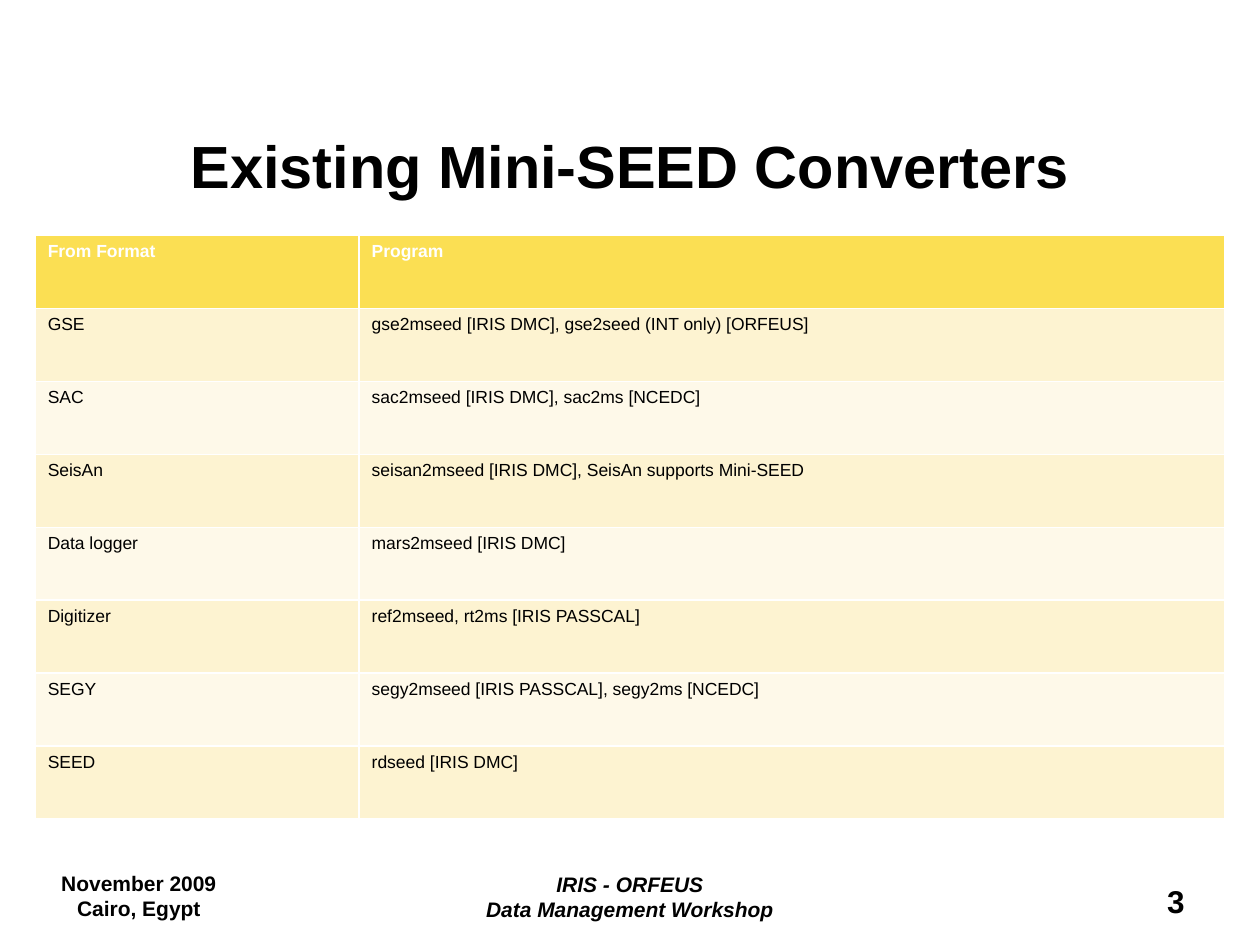
from dataclasses import dataclass, field

from pptx import Presentation
from pptx.dml.color import RGBColor
from pptx.enum.text import MSO_ANCHOR, PP_ALIGN
from pptx.util import Cm, Pt

BLACK, WHITE = "000000", "FFFFFF"
HEAD, BANDS = "FBDF53", ("FDF3D1", "FEF9E9")
COLS = (6.53, 17.45)
ROW = 1.47
ROWS = (
    ("From Format", "Program"),
    ("GSE", "gse2mseed [IRIS DMC], gse2seed (INT only) [ORFEUS]"),
    ("SAC", "sac2mseed [IRIS DMC], sac2ms [NCEDC]"),
    ("SeisAn", "seisan2mseed [IRIS DMC], SeisAn supports Mini-SEED"),
    ("Data logger", "mars2mseed [IRIS DMC]"),
    ("Digitizer", "ref2mseed, rt2ms [IRIS PASSCAL]"),
    ("SEGY", "segy2mseed [IRIS PASSCAL], segy2ms [NCEDC]"),
    ("SEED", "rdseed [IRIS DMC]"),
)


@dataclass
class Note:
    lines: tuple
    box: tuple
    align: PP_ALIGN = PP_ALIGN.CENTER
    style: dict = field(default_factory=dict)


NOTES = (
    Note(("November 2009", "Cairo, Egypt"), (0.3, 17.42, 5, 1.27)),
    Note(("IRIS - ORFEUS", "Data Management Workshop"),
         (9.5, 17.45, 6.4, 1.27), style={"italic": True}),
    Note(("3",), (18.21, 17.65, 5.92, 1.02), PP_ALIGN.RIGHT, {"size": Pt(18)}),
)


def tint(code: str) -> RGBColor:
    """Turn a hex string into a colour."""
    return RGBColor.from_string(code)


def write(frame, lines: tuple, align: PP_ALIGN, color: str = BLACK, **style) -> None:
    """Fill a text frame with lines in one format."""
    look = {"name": "Arial", "size": Pt(12), "bold": True, **style}
    frame.word_wrap = True
    frame.text = "\n".join(lines)
    for para in frame.paragraphs:
        para.alignment = align
        para.font.color.rgb = tint(color)
        for key, value in look.items():
            setattr(para.font, key, value)


def add_title(slide, text: str) -> None:
    """Place and format the title."""
    title = slide.shapes.title
    place = {"left": 0, "top": 2.26, "width": 25.4, "height": 2.11}
    for key, value in place.items():
        setattr(title, key, Cm(value))
    write(title.text_frame, (text,), PP_ALIGN.CENTER, size=Pt(34))
    title.text_frame.vertical_anchor = MSO_ANCHOR.MIDDLE


def add_note(slide, note: Note) -> None:
    """Add one footer text."""
    box = slide.shapes.add_textbox(*map(Cm, note.box))
    write(box.text_frame, note.lines, note.align, **note.style)


def add_grid(slide) -> None:
    """Add the table of formats and programs."""
    size = sum(COLS), ROW * len(ROWS)
    table = slide.shapes.add_table(
        len(ROWS), len(COLS), Cm(0.71), Cm(4.75), *map(Cm, size)).table
    for col, width in zip(table.columns, COLS):
        col.width = Cm(width)
    for r, texts in enumerate(ROWS):
        table.rows[r].height = Cm(ROW)
        top = r == 0
        for c, text in enumerate(texts):
            cell = table.cell(r, c)
            cell.fill.solid()
            cell.fill.fore_color.rgb = tint(HEAD if top else BANDS[(r - 1) % 2])
            write(cell.text_frame, (text,), PP_ALIGN.LEFT,
                  WHITE if top else BLACK, size=Pt(10), bold=top)


def main() -> None:
    """Build and save the slide."""
    deck = Presentation()
    deck.slide_width, deck.slide_height = Cm(25.4), Cm(19.05)
    slide = deck.slides.add_slide(deck.slide_layouts[5])
    add_title(slide, "Existing Mini-SEED Converters")
    for note in NOTES:
        add_note(slide, note)
    add_grid(slide)
    deck.save("out.pptx")


if __name__ == "__main__":
    main()
